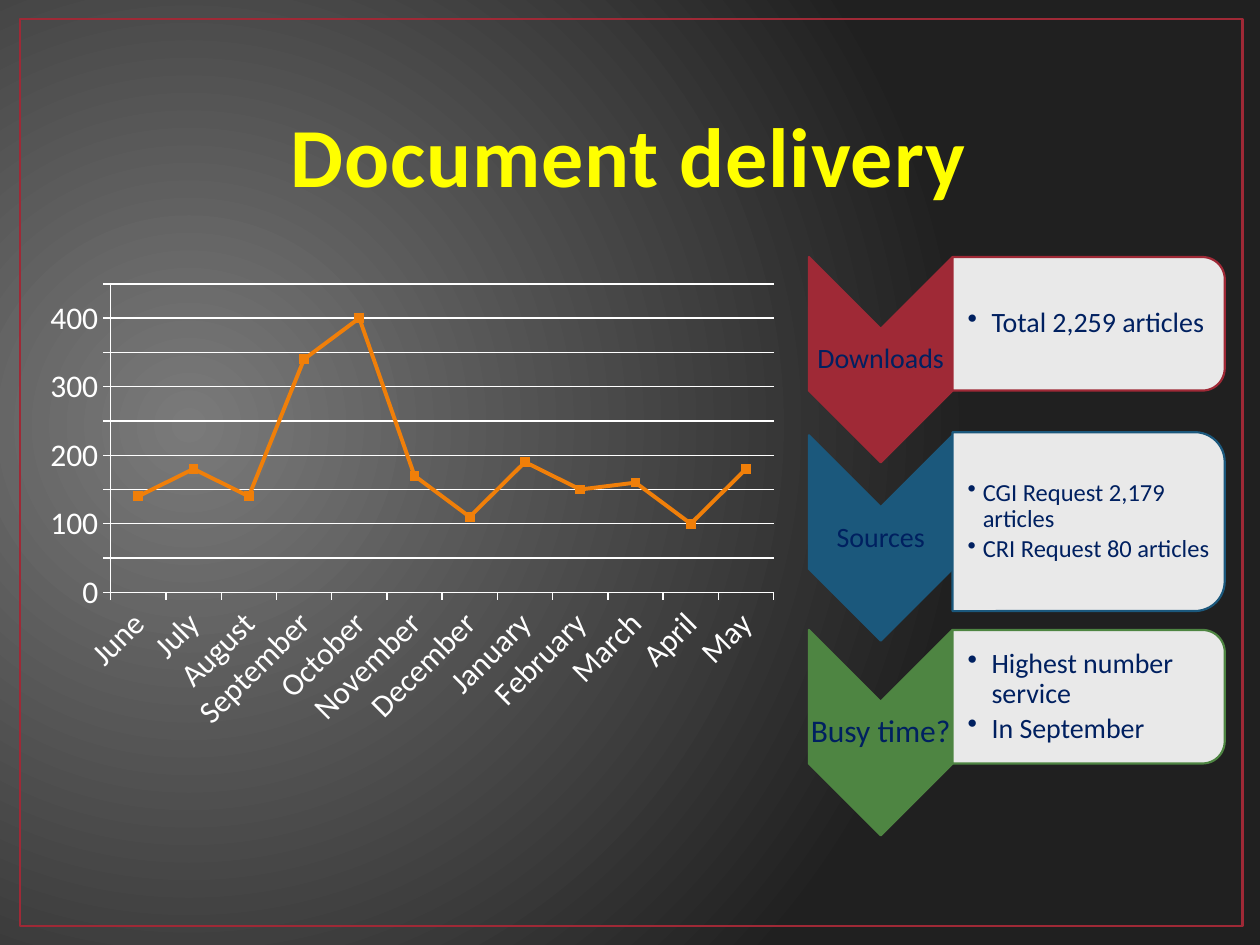
"""Build the document delivery slide with a monthly line chart and three chevron steps."""
from lxml.etree import SubElement
from pptx import Presentation
from pptx.chart.data import CategoryChartData
from pptx.dml.color import RGBColor
from pptx.enum.chart import XL_CHART_TYPE as ChartType, XL_MARKER_STYLE as Marker, XL_TICK_MARK as Tick
from pptx.enum.shapes import MSO_SHAPE as Shape
from pptx.enum.text import MSO_ANCHOR as Anchor, PP_ALIGN as Align
from pptx.oxml.ns import qn
from pptx.util import Inches, Pt

RED = RGBColor(0x9F, 0x29, 0x36)
BLUE = RGBColor(0x1B, 0x58, 0x7C)
GREEN = RGBColor(0x4E, 0x85, 0x42)
ORANGE = RGBColor(0xF0, 0x7F, 0x09)
NAVY = RGBColor(0x00, 0x20, 0x60)
YELLOW = RGBColor(0xFF, 0xFF, 0x00)
WHITE = RGBColor(0xFF, 0xFF, 0xFF)
LIGHT_GRAY = RGBColor(0x7A, 0x7A, 0x7A)
DARK_GRAY = RGBColor(0x20, 0x20, 0x20)
FONT = "Calibri"
COLUMNS, ROWS = 100, 75

presentation = Presentation()
presentation.slide_width, presentation.slide_height = Inches(10), Inches(7.5)
slide = presentation.slides.add_slide(presentation.slide_layouts[6])


def grid(column, row, columns, rows):
    cell_width = presentation.slide_width / COLUMNS
    cell_height = presentation.slide_height / ROWS
    return [round(length) for length in (column * cell_width, row * cell_height,
                                         columns * cell_width, rows * cell_height)]


def add_text(lines, area, size, color=NAVY, bold=False, align=Align.CENTER, anchor=Anchor.MIDDLE,
             inset=0.01, margin=0.01, indent=0, line_spacing=0.9, after=0.35, tracking=0):
    frame = slide.shapes.add_textbox(*grid(*area)).text_frame
    frame.word_wrap = True
    frame.vertical_anchor = anchor
    frame.margin_left = Inches(inset)
    frame.margin_top = frame.margin_right = frame.margin_bottom = Inches(margin)
    frame.text = "\n".join(lines)
    for paragraph in frame.paragraphs:
        paragraph.alignment = align
        paragraph.line_spacing = line_spacing
        paragraph.space_after = Pt(size * after)
        font = paragraph.runs[0].font
        font.name, font.size, font.bold, font.color.rgb = FONT, Pt(size), bold, color
        if tracking:
            paragraph.runs[0]._r.get_or_add_rPr().set("spc", str(tracking))
        if indent:
            properties = paragraph._p.get_or_add_pPr()
            properties.set("marL", str(Inches(indent)))
            properties.set("indent", str(-Inches(indent)))
            SubElement(properties, qn("a:buChar"), char="•")


background = slide.background.fill
background.gradient()
for stop, color in zip(background.gradient_stops, (LIGHT_GRAY, DARK_GRAY)):
    stop.color.rgb = color
gradient = slide.element.find(".//" + qn("a:gradFill"))
gradient.remove(gradient.find(qn("a:lin")))
circle = SubElement(gradient, qn("a:path"), path="circle")
SubElement(circle, qn("a:fillToRect"), l="15000", t="50000", r="85000", b="60000")

border = slide.shapes.add_shape(Shape.RECTANGLE, *grid(1.6, 1.5, 97, 72))
border.shadow.inherit = False
border.fill.background()
border.line.color.rgb = RED
border.line.width = Pt(1.5)

STEPS = [
    ("Downloads", 16, RED, 20.4, 20.4, 10.6, 16, 0.19, ["Total 2,259 articles"]),
    ("Sources", 16, BLUE, 34.55, 34.3, 14.2, 14, 0.12,
     ["CGI Request 2,179 articles", "CRI Request 80 articles"]),
    ("Busy time?", 18, GREEN, 50, 50, 10.6, 16, 0.19, ["Highest number service", "In September"]),
]
for label, label_size, color, chevron_row, panel_row, panel_rows, size, indent, details in STEPS:
    for kind, fill, column, row, columns, rows in (
            (Shape.CHEVRON, color, 64.2, chevron_row, 11.4, 16.3),
            (Shape.ROUND_2_SAME_RECTANGLE, WHITE, 75.6, panel_row, 21.6, panel_rows)):
        shift = (columns - rows) / 2
        shape = slide.shapes.add_shape(kind, *grid(column + shift, row - shift, rows, columns))
        shape.rotation = 90
        shape.shadow.inherit = False
        shape.fill.solid()
        shape.fill.fore_color.rgb = fill
        shape.line.color.rgb = color
        shape.line.width = Pt(1.25)
    panel_color = shape._element.spPr.find(qn("a:solidFill")).find(qn("a:srgbClr"))
    SubElement(panel_color, qn("a:alpha"), val="90000")
    add_text([label], (64.2, chevron_row + 5.7, 11.4, 4.9), label_size)
    add_text(details, (75.6, panel_row + 0.6, 21, panel_rows - 1.2), size,
             align=Align.LEFT, inset=0.12, indent=indent, after=0.15)

add_text(["Document delivery"], (7.5, 8.4, 84.3, 8.3), 48, color=YELLOW, bold=True,
         anchor=Anchor.BOTTOM, inset=0.1, margin=0.05, line_spacing=1, after=0, tracking=50)

data = CategoryChartData()
data.categories = ["June", "July", "August", "September", "October", "November",
                   "December", "January", "February", "March", "April", "May"]
data.add_series("Series 1", (140, 180, 140, 340, 400, 170, 110, 190, 150, 160, 100, 180))
chart = slide.shapes.add_chart(ChartType.LINE_MARKERS, *grid(2.8, 21.8, 59.8, 37), data).chart
chart.has_legend = chart.has_title = False
chart.font.name, chart.font.size, chart.font.color.rgb = FONT, Pt(18), WHITE

value_axis, category_axis = chart.value_axis, chart.category_axis
value_axis.minimum_scale, value_axis.maximum_scale, value_axis.major_unit = 0, 450, 50
value_axis.has_major_gridlines = True
for axis in (value_axis, category_axis):
    axis.major_tick_mark = Tick.OUTSIDE
for ruled in (value_axis, category_axis, value_axis.major_gridlines):
    ruled.format.line.color.rgb = WHITE
    ruled.format.line.width = Pt(0.75)
category_axis._element.get_or_add_txPr().find(qn("a:bodyPr")).set("rot", "-2700000")

chart.plots[0].vary_by_categories = False
series = chart.plots[0].series[0]
series.smooth = False
series.format.line.color.rgb = ORANGE
series.format.line.width = Pt(2.25)
series.marker.style, series.marker.size = Marker.SQUARE, 5
series.marker.format.fill.solid()
series.marker.format.fill.fore_color.rgb = ORANGE
series.marker.format.line.color.rgb = ORANGE

presentation.save("out.pptx")
